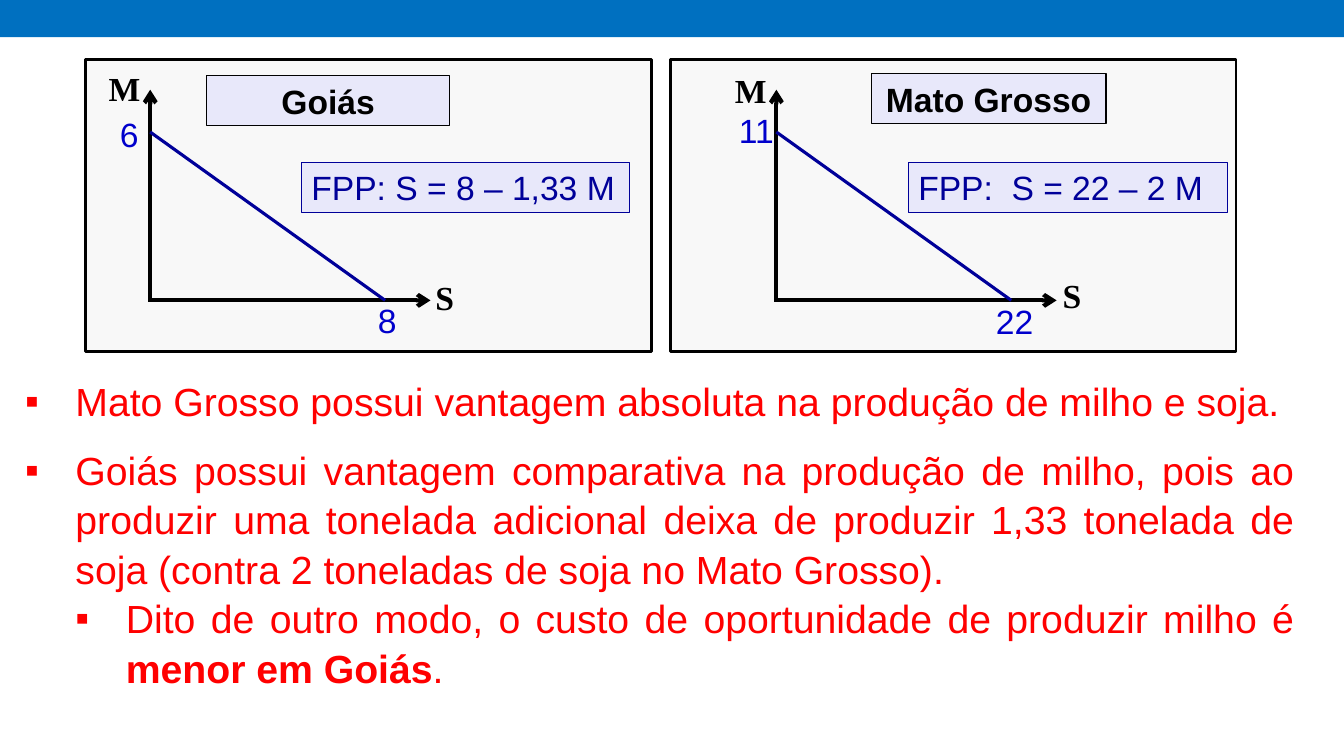
from dataclasses import dataclass

from lxml import etree
from pptx import Presentation
from pptx.dml.color import RGBColor
from pptx.enum import shapes, text
from pptx.oxml import ns
from pptx.util import Inches, Pt


@dataclass(frozen=True)
class Theme:
    band: str = "0070C0"
    panel: str = "F8F8F8"
    label: str = "E8E8FA"
    ink: str = "000000"
    frontier: str = "000099"
    value: str = "0000CC"
    body: str = "FF0000"
    sans: str = "Arial"
    serif: str = "Times New Roman"
    label_size: int = 24
    body_size: int = 28


theme = Theme()
presentation = Presentation()
presentation.slide_width = Inches(13.33)
presentation.slide_height = Inches(7.5)
slide = presentation.slides.add_slide(presentation.slide_layouts[6])


def add_box(box, words="", fill=None, line=None, width=0.75, color=theme.ink,
            font=theme.sans, bold=False, align=text.PP_ALIGN.LEFT):
    """Add a rectangle at box (left, top, width, height), with optional text, fill and outline."""
    box = [Inches(length) for length in box]
    if fill:
        shape = slide.shapes.add_shape(shapes.MSO_SHAPE.RECTANGLE, *box)
        shape.shadow.inherit = False
        shape.fill.solid()
        shape.fill.fore_color.rgb = RGBColor.from_string(fill)
        if line:
            shape.line.color.rgb = RGBColor.from_string(line)
            shape.line.width = Pt(width)
        else:
            shape.line.fill.background()
    else:
        shape = slide.shapes.add_textbox(*box)
    frame = shape.text_frame
    frame.word_wrap = True
    frame.vertical_anchor = text.MSO_ANCHOR.TOP
    if words:
        frame.text = words
        paragraph = frame.paragraphs[0]
        paragraph.alignment = align
        run_font = paragraph.runs[0].font
        run_font.name, run_font.size, run_font.bold = font, Pt(theme.label_size), bold
        run_font.color.rgb = RGBColor.from_string(color)
    return shape


def add_line(start, end, color, width, arrow=False):
    connector = slide.shapes.add_connector(
        shapes.MSO_CONNECTOR.STRAIGHT, *[Inches(length) for length in (*start, *end)])
    connector.line.color.rgb = RGBColor.from_string(color)
    connector.line.width = Pt(width)
    if arrow:
        outline = connector.line._get_or_add_ln()
        etree.SubElement(outline, ns.qn("a:tailEnd"), type="arrow")
    etree.SubElement(connector._element.spPr, ns.qn("a:effectLst"))


add_box((0, -0.03, 13.33, 0.4), fill=theme.band)

# Production frontiers: label boxes are (left, top, width)
states = [
    dict(panel=0.85, axis=1.49,
         name=("Goiás", 2.05, 0.75, 2.41),
         frontier=("FPP: S = 8 – 1,33 M", 2.99, 1.61, 3.25),
         axes=[("M", 0.98, 0.62), ("S", 4.22, 2.7)],
         values=[("6", 1.09, 1.08), ("8", 3.65, 2.93)]),
    dict(panel=6.65, axis=7.7,
         name=("Mato Grosso", 8.64, 0.73, 2.33),
         frontier=("FPP:  S = 22 – 2 M", 9.01, 1.61, 3.17),
         axes=[("M", 7.19, 0.64), ("S", 10.44, 2.68)],
         values=[("11", 7.23, 1.04), ("22", 9.78, 2.94)]),
]
label_height = 0.5
for state in states:
    add_box((state["panel"], 0.59, 5.61, 2.9), fill=theme.panel, line=theme.ink, width=2)
    axis = state["axis"]
    add_line((axis, 2.96), (axis, 0.89), theme.ink, 3, arrow=True)
    add_line((axis - 0.02, 2.98), (axis + 2.78, 2.98), theme.ink, 3, arrow=True)
    for words, left, top in state["axes"]:
        add_box((left, top, 0.37, label_height), words, font=theme.serif, bold=True)
    add_line((axis, 1.31), (axis + 2.33, 2.98), theme.frontier, 2.25)
    words, *place = state["name"]
    add_box((*place, label_height), words, theme.label, theme.ink,
            bold=True, align=text.PP_ALIGN.CENTER)
    for words, left, top in state["values"]:
        add_box((left, top, 0.6, label_height), words, color=theme.value)
    words, *place = state["frontier"]
    add_box((*place, label_height), words, theme.label, theme.frontier, color=theme.frontier)

# Conclusions: level, space before, runs as (words, bold)
conclusions = [
    (0, 0, [("Mato Grosso possui vantagem absoluta na produção de milho e soja.", False)]),
    (0, 14, [("Goiás possui vantagem comparativa na produção de milho, pois ao produzir uma "
              "tonelada adicional deixa de produzir 1,33 tonelada de soja (contra 2 toneladas "
              "de soja no Mato Grosso).", False)]),
    (1, 0, [("Dito de outro modo, o custo de oportunidade de produzir milho é ", False),
            ("menor em Goiás", True), (".", False)]),
]
frame = add_box((0.15, 3.67, 12.78, 3.13)).text_frame
for index, (level, space, runs) in enumerate(conclusions):
    paragraph = frame.add_paragraph() if index else frame.paragraphs[0]
    paragraph.level = level
    paragraph.alignment = text.PP_ALIGN.JUSTIFY
    paragraph.line_spacing = 1.05
    paragraph.space_before = Pt(space)
    properties = paragraph._p.get_or_add_pPr()
    properties.set("marL", str(Inches(0.5 + 0.5 * level)))
    properties.set("indent", str(Inches(-0.5)))
    etree.SubElement(properties, ns.qn("a:buFont"), typeface=theme.sans)
    etree.SubElement(properties, ns.qn("a:buChar"), char="▪")
    for words, bold in runs:
        run = paragraph.add_run()
        run.text = words
        run.font.name, run.font.size, run.font.bold = theme.sans, Pt(theme.body_size), bold
        run.font.color.rgb = RGBColor.from_string(theme.body)

presentation.save("out.pptx")
